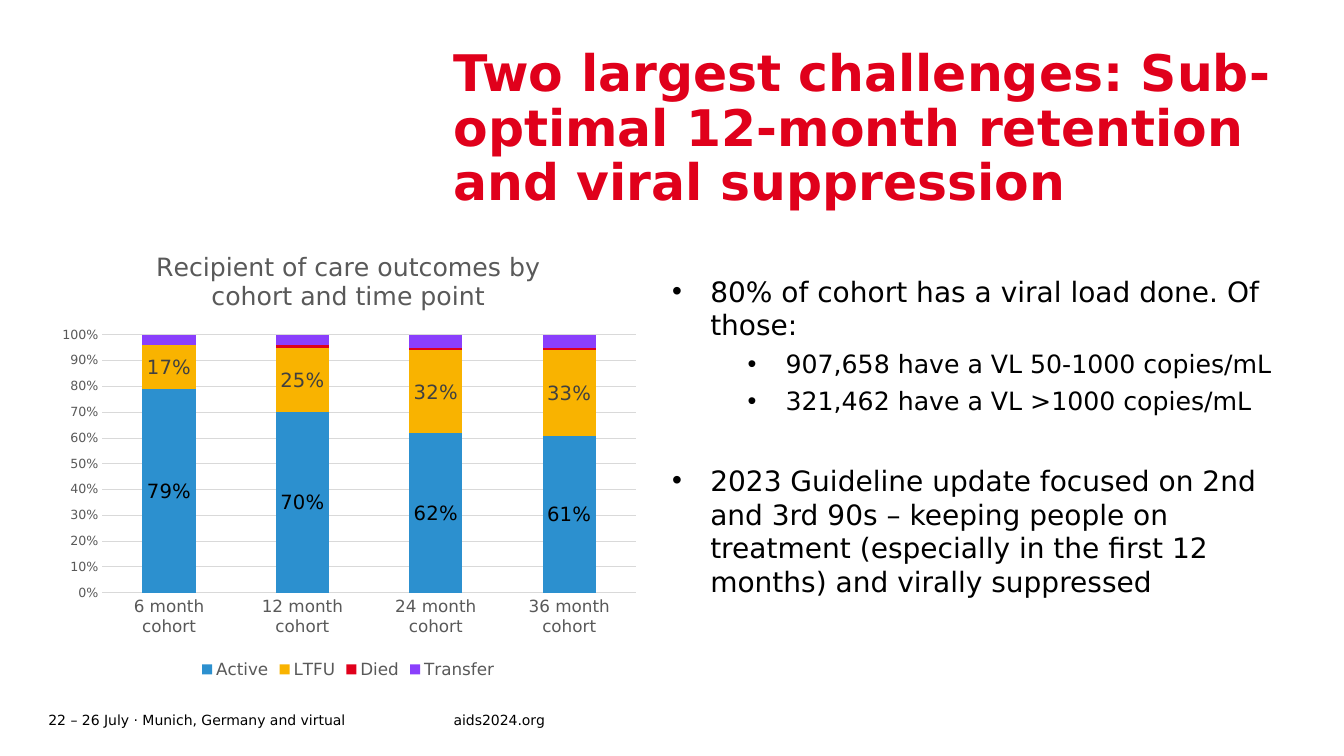
from lxml import etree
from pptx import Presentation
from pptx.chart.data import CategoryChartData
from pptx.dml.color import RGBColor
from pptx.enum.chart import XL_CHART_TYPE, XL_LABEL_POSITION, XL_LEGEND_POSITION, XL_TICK_MARK
from pptx.enum.text import MSO_ANCHOR
from pptx.oxml import parse_xml
from pptx.oxml.ns import nsdecls, qn
from pptx.util import Cm, Pt

STACKED = XL_CHART_TYPE.COLUMN_STACKED
CENTER = XL_LABEL_POSITION.CENTER
BOTTOM = XL_LEGEND_POSITION.BOTTOM
NO_TICK = XL_TICK_MARK.NONE
TOP, MIDDLE = MSO_ANCHOR.TOP, MSO_ANCHOR.MIDDLE

BLACK = RGBColor(0x00, 0x00, 0x00)
CHARCOAL = RGBColor(0x40, 0x40, 0x40)
GRAY = RGBColor(0x59, 0x59, 0x59)
GRID_GRAY = RGBColor(0xD9, 0xD9, 0xD9)
RED = RGBColor(0xE0, 0x00, 0x1B)
BLUE = RGBColor(0x2C, 0x90, 0xCF)
YELLOW = RGBColor(0xF9, 0xB3, 0x00)
PURPLE = RGBColor(0x8A, 0x3F, 0xFC)

LEFT_EDGE = 1.22
TITLE_LEFT = 11.43
FOOTER_TOP = 17.83

COHORTS = ["6 month cohort", "12 month cohort", "24 month cohort", "36 month cohort"]
# name, values, fill, label colour (None: no labels)
OUTCOMES = [
    ("Active", (0.79, 0.70, 0.62, 0.61), BLUE, BLACK),
    ("LTFU", (0.17, 0.25, 0.32, 0.33), YELLOW, CHARCOAL),
    ("Died", (None, 0.01, 0.01, 0.01), RED, None),
    ("Transfer", (0.04, 0.04, 0.05, 0.05), PURPLE, None),
]
# text, size, indent in cm, space before in points
FINDINGS = [
    ("80% of cohort has a viral load done. Of those:", 20, 0.96, 0),
    ("907,658 have a VL 50-1000 copies/mL", 18, 2.86, 5),
    ("321,462 have a VL >1000 copies/mL", 18, 2.86, 5),
    ("2023 Guideline update focused on 2nd and 3rd 90s – keeping people on treatment "
     "(especially in the first 12 months) and virally suppressed", 20, 0.96, 34),
]


class SlideBuilder:
    FONT = "DejaVu Sans"
    HANGING = Cm(0.96)

    def __init__(self, slide):
        self.slide = slide

    def style(self, font, size, color=BLACK, bold=False):
        font.name, font.size, font.bold = self.FONT, Pt(size), bold
        font.color.rgb = color

    def frame(self, left, top, width, height, anchor=TOP):
        """Add an empty wrapping text box without margins."""
        box = self.slide.shapes.add_textbox(Cm(left), Cm(top), Cm(width), Cm(height))
        frame = box.text_frame
        frame.word_wrap = True
        frame.vertical_anchor = anchor
        frame.margin_left = frame.margin_right = frame.margin_top = frame.margin_bottom = 0
        return frame

    def text(self, words, left, top, width, height, size, color=BLACK,
             bold=False, anchor=TOP, line_spacing=None):
        frame = self.frame(left, top, width, height, anchor)
        frame.text = words
        paragraph = frame.paragraphs[0]
        paragraph.line_spacing = line_spacing
        self.style(paragraph.runs[0].font, size, color, bold)

    def bullets(self, items, left, top, width, height):
        frame = self.frame(left, top, width, height)
        for index, (words, size, indent, space) in enumerate(items):
            paragraph = frame.add_paragraph() if index else frame.paragraphs[0]
            paragraph.text = words
            properties = paragraph._p.get_or_add_pPr()
            properties.set("marL", str(Cm(indent)))
            properties.set("indent", str(-self.HANGING))
            etree.SubElement(properties, qn("a:buFont"), typeface="Arial")
            etree.SubElement(properties, qn("a:buChar"), char="•")
            paragraph.space_before = Pt(space)
            self.style(paragraph.runs[0].font, size)

    def stacked_chart(self, title, categories, series, left, top, width, height):
        data = CategoryChartData(number_format="0%")
        data.categories = categories
        for name, values, _, _ in series:
            data.add_series(name, values)
        chart = self.slide.shapes.add_chart(
            STACKED, Cm(left), Cm(top), Cm(width), Cm(height), data).chart
        self.style(chart.font, 10)

        chart.has_title = True
        chart.chart_title.include_in_layout = False
        heading = chart.chart_title.text_frame
        heading.text = title
        self.style(heading.paragraphs[0].runs[0].font, 18, GRAY)

        chart.has_legend = True
        chart.legend.position = BOTTOM
        chart.legend.include_in_layout = False
        self.style(chart.legend.font, 12, GRAY)

        self.axes(chart)
        plot = chart.plots[0]
        plot.gap_width, plot.overlap = 150, 100
        plot.vary_by_categories = False
        for bars, (_, _, fill, label_color) in zip(plot.series, series):
            bars.format.fill.solid()
            bars.format.fill.fore_color.rgb = fill
            if label_color is not None:
                labels = bars.data_labels
                labels.show_value = True
                labels.number_format, labels.number_format_is_linked = "0%", False
                labels.position = CENTER
                self.style(labels.font, 14, label_color)
        self.place_plot(chart, x=0.09, y=0.23, w=0.89, h=0.57)

    def axes(self, chart):
        for axis, size in ((chart.category_axis, 12), (chart.value_axis, 9)):
            axis.major_tick_mark = axis.minor_tick_mark = NO_TICK
            self.style(axis.tick_labels.font, size, GRAY)
        percent = chart.value_axis
        percent.minimum_scale, percent.maximum_scale, percent.major_unit = 0, 1, 0.1
        percent.tick_labels.number_format = "0%"
        percent.tick_labels.number_format_is_linked = False
        percent.format.line.fill.background()
        for line in (chart.category_axis.format.line, percent.major_gridlines.format.line):
            line.color.rgb = GRID_GRAY
            line.width = Pt(0.75)

    def place_plot(self, chart, **fractions):
        """Fix the inner plot area as fractions of the chart's size."""
        area = chart._chartSpace.chart.plotArea
        for old in area.findall(qn("c:layout")):
            area.remove(old)
        sides = "".join(f'<c:{side} val="{value}"/>' for side, value in fractions.items())
        area.insert(0, parse_xml(
            f'<c:layout {nsdecls("c")}><c:manualLayout><c:layoutTarget val="inner"/>'
            f'<c:xMode val="edge"/><c:yMode val="edge"/>{sides}</c:manualLayout></c:layout>'))


def main():
    deck = Presentation()
    deck.slide_width, deck.slide_height = Cm(33.87), Cm(19.05)
    builder = SlideBuilder(deck.slides.add_slide(deck.slide_layouts[6]))

    builder.text("22 – 26 July · Munich, Germany and virtual",
                 LEFT_EDGE, FOOTER_TOP, 10.21, 0.61, 10, anchor=MIDDLE)
    builder.text("aids2024.org", TITLE_LEFT, FOOTER_TOP, 4.9, 0.61, 10, anchor=MIDDLE)
    builder.bullets(FINDINGS, 16.94, 6.91, 15.65, 11.4)
    builder.text("Two largest challenges: Sub-optimal 12-month retention and viral suppression",
                 TITLE_LEFT, 1.22, 21.21, 3.4, 36, RED, bold=True, line_spacing=0.9)
    builder.stacked_chart("Recipient of care outcomes by cohort and time point",
                          COHORTS, OUTCOMES, LEFT_EDGE, 5.82, 15.11, 11.4)
    deck.save("out.pptx")


if __name__ == "__main__":
    main()
